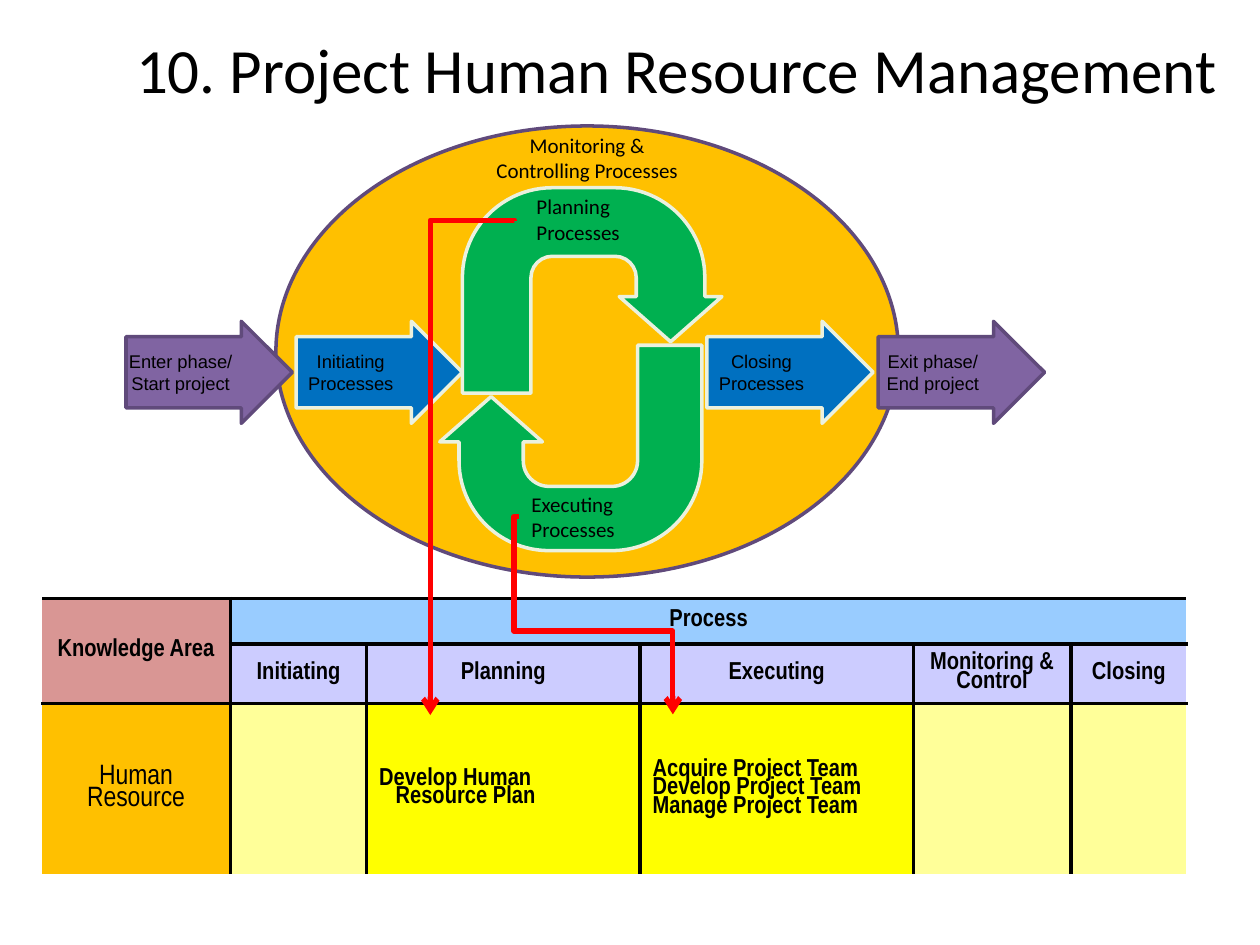
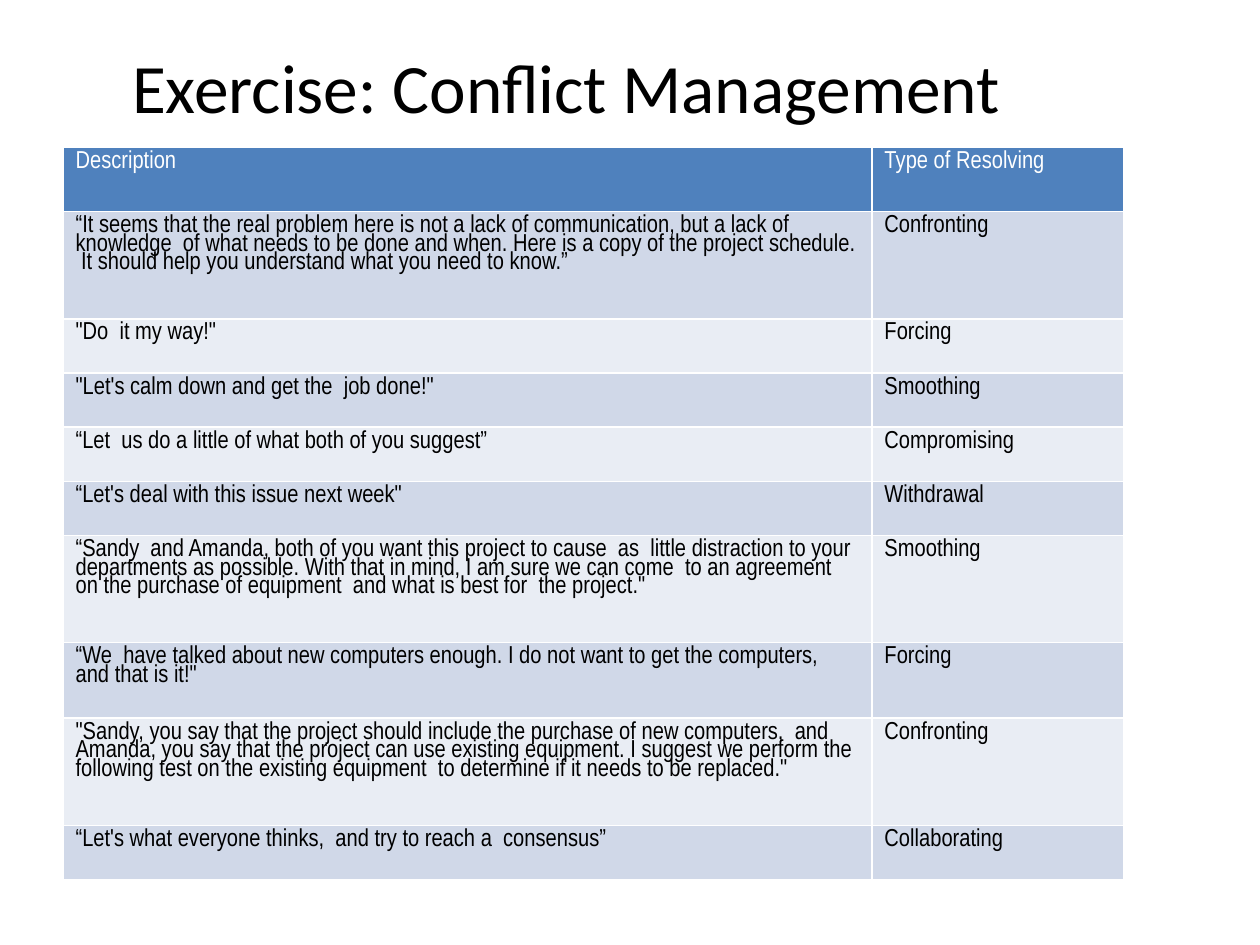
from lxml import etree
from pptx import Presentation
from pptx.dml.color import RGBColor
from pptx.enum.shapes import MSO_CONNECTOR, MSO_SHAPE
from pptx.enum.text import MSO_ANCHOR, PP_ALIGN
from pptx.oxml.ns import qn
from pptx.util import Inches, Pt

BLACK = RGBColor(0x00, 0x00, 0x00)
WHITE = RGBColor(0xFF, 0xFF, 0xFF)
RED = RGBColor(0xFF, 0x00, 0x00)
ORANGE = RGBColor(0xFF, 0xC0, 0x00)
YELLOW = RGBColor(0xFF, 0xFF, 0x00)
PALE_YELLOW = RGBColor(0xFF, 0xFF, 0x99)
ROSE = RGBColor(0xD9, 0x96, 0x94)
SKY = RGBColor(0x99, 0xCC, 0xFF)
LAVENDER = RGBColor(0xCC, 0xCC, 0xFF)
PURPLE = RGBColor(0x80, 0x64, 0xA2)
DARK_PURPLE = RGBColor(0x60, 0x4A, 0x7B)
BLUE = RGBColor(0x00, 0x70, 0xC0)
GREEN = RGBColor(0x00, 0xB0, 0x50)
PALE_GREEN = RGBColor(0xEB, 0xF1, 0xDE)
HEADER_BLUE = RGBColor(0x4F, 0x81, 0xBD)
BAND_DARK = RGBColor(0xD0, 0xD8, 0xE8)
BAND_LIGHT = RGBColor(0xE9, 0xED, 0xF4)

# Slide 1: phase arrows as (text, left, fill, outline)
PHASES = [
    ("Enter phase/\nStart project", 1.0, PURPLE, DARK_PURPLE),
    ("Exit phase/\nEnd project", 6.97, PURPLE, DARK_PURPLE),
    ("Initiating\nProcesses", 2.35, BLUE, PALE_GREEN),
    ("Closing\nProcesses", 5.61, BLUE, PALE_GREEN),
]
# (left, top, width, height), rotation, shaft thickness
LOOP_ARROWS = [
    ((3.67, 1.49, 2.06, 1.63), 0, 0.334),
    ((3.49, 2.74, 2.08, 1.63), 180, 0.313),
]
LOOP_LABELS = [
    ("Planning\nProcesses", (4.16, 1.49, 1.07, 0.49), PP_ALIGN.LEFT),
    ("Executing\nProcesses", (4.12, 3.85, 1.07, 0.49), PP_ALIGN.LEFT),
    ("Monitoring &\nControlling Processes", (3.67, 1.0, 1.98, 0.5), PP_ALIGN.CENTER),
]
# preset, (left, top, width, height), rotation, adjustments
POINTERS = [
    ("bentConnector3", (1.79, 3.38, 3.92, 0.67), 90, (-0.002,)),
    ("bentConnector4", (4.12, 4.1, 1.22, 1.57), 0, (-0.034, 0.579)),
]
AREA_COLUMNS = [1.5, 1.08, 2.17, 2.17, 1.25, 0.92]
AREA_HEIGHTS = [0.36, 0.47, 1.36]
AREA_ROWS = [
    ["Knowledge Area", "Process", "", "", "", ""],
    ["", "Initiating", "Planning", "Executing", "Monitoring & Control", "Closing"],
    ["Human\nResource", "", "Develop Human Resource Plan",
     "Acquire Project Team\nDevelop Project Team\nManage Project Team", "", ""],
]
AREA_FILLS = [
    [ROSE] + [SKY] * 5,
    [ROSE] + [LAVENDER] * 5,
    [ORANGE, PALE_YELLOW, YELLOW, YELLOW, PALE_YELLOW, PALE_YELLOW],
]

# Slide 2: (description, type of resolving, row height)
CONFLICTS = [
    ("Description", "Type of Resolving", 0.51),
    ("“It seems that the real problem here is not a lack of communication, but a lack of "
     "knowledge  of what needs to be done and when. Here is a copy of the project schedule.  "
     "It should help you understand what you need to know.”", "Confronting", 0.85),
    ('"Do  it my way!"', "Forcing", 0.43),
    ('"Let\'s calm down and get the  job done!"', "Smoothing", 0.43),
    ("“Let  us do a little of what both of you suggest”", "Compromising", 0.43),
    ("“Let's deal with this issue next week\"", "Withdrawal", 0.43),
    ("“Sandy  and Amanda, both of you want this project to cause  as  little distraction to "
     "your departments as possible. With that in mind, I am sure we can come  to an agreement  "
     "on the purchase of equipment  and what is best for  the project.\"", "Smoothing", 0.85),
    ("“We  have talked about new computers enough. I do not want to get the computers,  "
     "and that is it!\"", "Forcing", 0.6),
    ('"Sandy, you say that the project should include the purchase of new computers,  and '
     "Amanda, you say that the project can use existing equipment. I suggest we perform the "
     'following test on the existing equipment  to determine if it needs to be replaced."',
     "Confronting", 0.85),
    ("“Let's what everyone thinks,  and try to reach a  consensus”", "Collaborating", 0.43),
]


def inches(values):
    return [Inches(value) for value in values]


def write(frame, text, size=14, font="Arial Narrow", color=BLACK, bold=False,
          align=PP_ALIGN.LEFT, spacing=1.0, hanging=0):
    """Fill a text frame, one paragraph for each line of the text."""
    for index, line in enumerate(text.split("\n")):
        paragraph = frame.add_paragraph() if index else frame.paragraphs[0]
        paragraph.alignment = align
        paragraph.line_spacing = spacing
        if hanging:
            properties = paragraph._p.get_or_add_pPr()
            properties.set("marL", str(Inches(hanging)))
            properties.set("indent", str(-Inches(hanging)))
        run = paragraph.add_run()
        run.text = line
        run.font.size = Pt(size)
        run.font.name = font
        run.font.bold = bold
        run.font.color.rgb = color


def add_label(slide, text, box, anchor=MSO_ANCHOR.TOP, **style):
    frame = slide.shapes.add_textbox(*inches(box)).text_frame
    frame.word_wrap = True
    frame.vertical_anchor = anchor
    write(frame, text, font="Calibri", **style)


def add_title(slide, text, box, size):
    add_label(slide, text, box, MSO_ANCHOR.MIDDLE, size=size, align=PP_ALIGN.CENTER)


def add_figure(slide, preset, box, fill, outline, adjustments=()):
    figure = slide.shapes.add_shape(preset, *inches(box))
    figure.shadow.inherit = False
    figure.fill.solid()
    figure.fill.fore_color.rgb = fill
    figure.line.color.rgb = outline
    figure.line.width = Pt(2)
    for index, value in enumerate(adjustments):
        figure.adjustments[index] = value
    return figure


def add_pointer(slide, preset, box, rotation, adjustments):
    left, top, width, height = inches(box)
    pointer = slide.shapes.add_connector(MSO_CONNECTOR.ELBOW, left, top,
                                         left + width, top + height)
    pointer.line.color.rgb = RED
    pointer.line.width = Pt(3)
    properties = pointer._element.spPr
    if rotation:
        properties.find(qn("a:xfrm")).set("rot", str(rotation * 60000))
    geometry = properties.find(qn("a:prstGeom"))
    geometry.set("prst", preset)
    guides = geometry.find(qn("a:avLst"))
    if guides is None:
        guides = etree.SubElement(geometry, qn("a:avLst"))
    for index, value in enumerate(adjustments, 1):
        etree.SubElement(guides, qn("a:gd"), name=f"adj{index}",
                         fmla=f"val {round(value * 100000)}")
    etree.SubElement(properties.find(qn("a:ln")), qn("a:tailEnd"), type="arrow")
    etree.SubElement(properties, qn("a:effectLst"))


def add_grid(slide, left, top, columns, heights):
    table = slide.shapes.add_table(len(heights), len(columns), *inches(
        (left, top, sum(columns), sum(heights)))).table
    for column, width in zip(table.columns, columns):
        column.width = Inches(width)
    for row, height in zip(table.rows, heights):
        row.height = Inches(height)
    return table


def paint_cell(cell, fill, sides, border, points):
    """Set the fill and the borders on the given sides, out of L, R, T and B."""
    cell.fill.solid()
    cell.fill.fore_color.rgb = fill
    properties = cell._tc.get_or_add_tcPr()
    for index, side in enumerate(sides):
        edge = etree.Element(qn(f"a:ln{side}"), w=str(Pt(points)))
        paint = etree.SubElement(edge, qn("a:solidFill"))
        etree.SubElement(paint, qn("a:srgbClr"), val=str(border))
        properties.insert(index, edge)


def area_owner(row, column):
    """Give the top left cell of the merged block that a cell lies in."""
    if column == 0:
        return (0 if row < 2 else row), 0
    return (0, 1) if row == 0 else (row, column)


def area_sides(row, column):
    """List the sides ruled: the top of the table and all edges between blocks."""
    last_row, last_column = len(AREA_HEIGHTS) - 1, len(AREA_COLUMNS) - 1
    here = area_owner(row, column)
    ruled = {
        "L": column > 0 and area_owner(row, column - 1) != here,
        "R": column < last_column and area_owner(row, column + 1) != here,
        "T": row == 0 or area_owner(row - 1, column) != here,
        "B": row < last_row and area_owner(row + 1, column) != here,
    }
    return [side for side, is_ruled in ruled.items() if is_ruled]


def add_area_table(slide):
    table = add_grid(slide, 0.33, 4.75, AREA_COLUMNS, AREA_HEIGHTS)
    table.cell(0, 0).merge(table.cell(1, 0))
    table.cell(0, 1).merge(table.cell(0, 5))
    for row, texts in enumerate(AREA_ROWS):
        for column, text in enumerate(texts):
            cell = table.cell(row, column)
            paint_cell(cell, AREA_FILLS[row][column], area_sides(row, column), BLACK, 2.25)
            cell.vertical_anchor = MSO_ANCHOR.MIDDLE
            if not text:
                continue
            is_area = row == 2 and column == 0
            is_process = row == 2 and column > 0
            write(cell.text_frame, text, size=16 if is_area else 14, bold=not is_area,
                  align=PP_ALIGN.LEFT if is_process else PP_ALIGN.CENTER,
                  spacing=0.8, hanging=0.13 if (row, column) == (2, 2) else 0)


def build_human_resource(slide):
    add_title(slide, "10. Project Human Resource Management", (0.74, 0.29, 9.26, 0.5), 36)
    add_area_table(slide)
    add_figure(slide, MSO_SHAPE.OVAL, (2.19, 1, 4.94, 3.58), ORANGE, DARK_PURPLE)
    for text, left, fill, outline in PHASES:
        phase = add_figure(slide, MSO_SHAPE.RIGHT_ARROW, (left, 2.55, 1.32, 0.81),
                           fill, outline, (0.697, 0.5))
        frame = phase.text_frame
        frame.margin_left = frame.margin_top = frame.margin_bottom = 0
        frame.margin_right = Inches(0.17)
        frame.vertical_anchor = MSO_ANCHOR.MIDDLE
        write(frame, text, size=10.5, font="Arial", align=PP_ALIGN.CENTER)
    for box, rotation, thickness in LOOP_ARROWS:
        loop = add_figure(slide, MSO_SHAPE.U_TURN_ARROW, box, GREEN, PALE_GREEN,
                          (thickness, 0.25, 0.22, 0.438, 0.75))
        loop.rotation = rotation
    for text, box, align in LOOP_LABELS:
        add_label(slide, text, box, size=12, align=align)
    for pointer in POINTERS:
        add_pointer(slide, *pointer)


def build_conflicts(slide):
    add_title(slide, "Exercise: Conflict Management", (0.33, 0.47, 8.33, 0.42), 39.6)
    table = add_grid(slide, 0.5, 1.17, [6.42, 2], [height for _, _, height in CONFLICTS])
    for row, (description, resolving, _) in enumerate(CONFLICTS):
        band = BAND_DARK if row % 2 else BAND_LIGHT
        for column, text in enumerate((description, resolving)):
            cell = table.cell(row, column)
            paint_cell(cell, band if row else HEADER_BLUE, "LRTB", WHITE, 1)
            write(cell.text_frame, text, color=BLACK if row else WHITE, spacing=0.8)


def main():
    deck = Presentation()
    deck.slide_width, deck.slide_height = Inches(10), Inches(7.5)
    for build in (build_human_resource, build_conflicts):
        build(deck.slides.add_slide(deck.slide_layouts[6]))
    deck.save("out.pptx")


if __name__ == "__main__":
    main()
